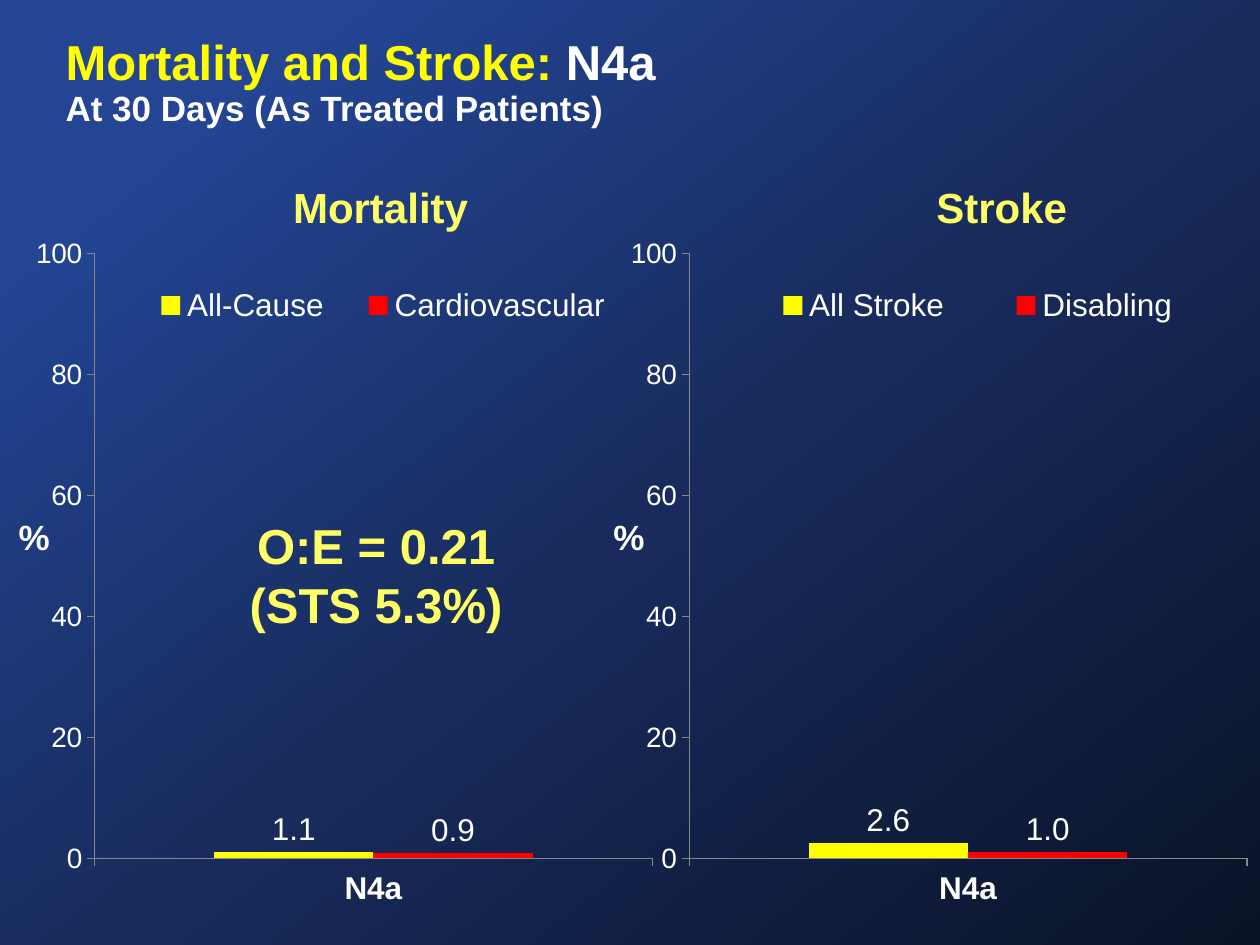
from copy import deepcopy
from dataclasses import dataclass

from lxml import etree
from pptx import Presentation
from pptx.chart.data import CategoryChartData
from pptx.dml.color import RGBColor
from pptx.enum.chart import XL_CHART_TYPE, XL_LABEL_POSITION, XL_LEGEND_POSITION, XL_TICK_MARK
from pptx.enum.text import MSO_ANCHOR, MSO_AUTO_SIZE, PP_ALIGN
from pptx.oxml.ns import qn
from pptx.util import Inches, Pt

COLUMN = XL_CHART_TYPE.COLUMN_CLUSTERED
ABOVE = XL_LABEL_POSITION.OUTSIDE_END
RIGHT = XL_LEGEND_POSITION.RIGHT
OUT, NONE = XL_TICK_MARK.OUTSIDE, XL_TICK_MARK.NONE
MIDDLE = MSO_ANCHOR.MIDDLE
FIXED = MSO_AUTO_SIZE.NONE
LEFT, CENTER = PP_ALIGN.LEFT, PP_ALIGN.CENTER
WIDE, HIGH = 10, 7.5
COLS, ROWS = 100, 75
VALVE = "N4a"


@dataclass(frozen=True)
class Theme:
    face: str = "Arial"
    white: str = "FFFFFF"
    yellow: str = "FFFF00"
    pale: str = "FFFF66"
    red: str = "FF0000"
    gray: str = "878787"
    back: tuple = ((0.14, "234594"), (0.53, "182B5C"), (1, "091226"))
    angle: int = 308
    large: int = 28
    head: int = 24
    mid: int = 20
    label: int = 18
    tick: int = 16


THEME = Theme()


def rgb(code):
    return RGBColor.from_string(code)


def place(x, y, w, h):
    return (Inches(x * WIDE / COLS), Inches(y * HIGH / ROWS),
            Inches(w * WIDE / COLS), Inches(h * HIGH / ROWS))


def style(font, size, color, bold=False):
    font.name, font.size, font.bold = THEME.face, Pt(size), bold
    font.color.rgb = rgb(color)


def paint_back(slide):
    fill = slide.background.fill
    fill.gradient()
    fill.gradient_angle = THEME.angle
    last = slide.background._cSld.find(".//" + qn("a:gsLst"))[-1]
    last.addnext(deepcopy(last))
    for stop, (share, color) in zip(fill.gradient_stops, THEME.back):
        stop.position = share
        stop.color.rgb = rgb(color)


def add_title(slide, box):
    title = slide.shapes.title
    title.left, title.top, title.width, title.height = place(*box)
    frame = title.text_frame
    frame.auto_size, frame.vertical_anchor = FIXED, MIDDLE
    para = frame.paragraphs[0]
    para.alignment, para.line_spacing = LEFT, 0.9
    parts = (("Mortality and Stroke: ", THEME.large, THEME.yellow),
             (VALVE, THEME.large, THEME.white),
             ("At 30 Days (As Treated Patients)", THEME.mid, THEME.white))
    for text, size, color in parts:
        if size == THEME.mid:
            para.add_line_break()
        run = para.add_run()
        run.text = text
        style(run.font, size, color, True)


def add_text(slide, box, lines, size, color, align=CENTER):
    frame = slide.shapes.add_textbox(*place(*box)).text_frame
    frame.word_wrap = True
    frame.text = "\n".join(lines)
    for para in frame.paragraphs:
        para.alignment = align
        style(para.font, size, color, True)


def set_layout(node, x, y, w, h, inner=False):
    for old in node.findall(qn("c:layout")):
        node.remove(old)
    layout = etree.Element(qn("c:layout"))
    manual = etree.SubElement(layout, qn("c:manualLayout"))
    pairs = [("layoutTarget", "inner")] if inner else []
    pairs += [("xMode", "edge"), ("yMode", "edge"), ("x", x), ("y", y), ("w", w), ("h", h)]
    for tag, val in pairs:
        etree.SubElement(manual, qn("c:" + tag)).set("val", str(val))
    if inner:
        node.insert(0, layout)
    else:
        node.find(qn("c:legendPos")).addnext(layout)


def add_bars(slide, box, series):
    data = CategoryChartData()
    data.categories = [VALVE]
    for name, val in series:
        data.add_series(name, [val])
    chart = slide.shapes.add_chart(COLUMN, *place(*box), data).chart
    chart.has_title = False
    style(chart.font, THEME.label, THEME.white)

    plot = chart.plots[0]
    plot.gap_width, plot.overlap, plot.vary_by_categories = 150, 0, False
    for bar, color in zip(plot.series, (THEME.yellow, THEME.red)):
        bar.format.fill.solid()
        bar.format.fill.fore_color.rgb = rgb(color)
        tags = bar.data_labels
        tags.show_value, tags.position = True, ABOVE
        tags.number_format, tags.number_format_is_linked = "0.0", False
        style(tags.font, THEME.label, THEME.white)

    scale, base = chart.value_axis, chart.category_axis
    scale.minimum_scale, scale.maximum_scale, scale.major_unit = 0, 100, 20
    scale.has_major_gridlines = False
    scale.tick_labels.number_format = "General"
    scale.tick_labels.number_format_is_linked = False
    for axis, size, bold in ((scale, THEME.tick, False), (base, THEME.label, True)):
        axis.major_tick_mark, axis.minor_tick_mark = OUT, NONE
        axis.format.line.color.rgb = rgb(THEME.gray)
        axis.format.line.width = Pt(0.75)
        style(axis.tick_labels.font, size, THEME.white, bold)

    chart.has_legend = True
    legend = chart.legend
    legend.position, legend.include_in_layout = RIGHT, False
    style(legend.font, THEME.label, THEME.white)
    set_layout(legend._element, 0.16, 0.07, 0.8, 0.09)
    area = chart._chartSpace.find(".//" + qn("c:plotArea"))
    set_layout(area, 0.11, 0.04, 0.87, 0.87, inner=True)
    legend._element.find(qn("c:overlay")).set("val", "1")


def add_panel(slide, box, name, lead, series):
    x, y, w, h = box
    add_bars(slide, box, series)
    add_text(slide, (x + lead, y - 4, 28.2, 5), [name], THEME.head, THEME.pale)
    add_text(slide, (x - 1.4, y + 22.5, 6.6, 4.4), ["%"], THEME.mid, THEME.white, LEFT)


def main():
    deck = Presentation()
    deck.slide_width, deck.slide_height = Inches(WIDE), Inches(HIGH)
    slide = deck.slides.add_slide(deck.slide_layouts.get_by_name("Title Only"))
    paint_back(slide)
    add_title(slide, (4.2, 0, 72.5, 13.3))
    panels = ((1.9, "Mortality", 14.2, (("All-Cause", 1.1), ("Cardiovascular", 0.9))),
              (49.1, "Stroke", 16.3, (("All Stroke", 2.6), ("Disabling", 1.0))))
    for x, name, lead, series in panels:
        add_panel(slide, (x, 17.9, 50.9, 55.2), name, lead, series)
    add_text(slide, (17, 40.4, 25.7, 10.4), ["O:E = 0.21", "(STS 5.3%)"],
             THEME.large, THEME.pale)
    deck.save("out.pptx")


if __name__ == "__main__":
    main()
